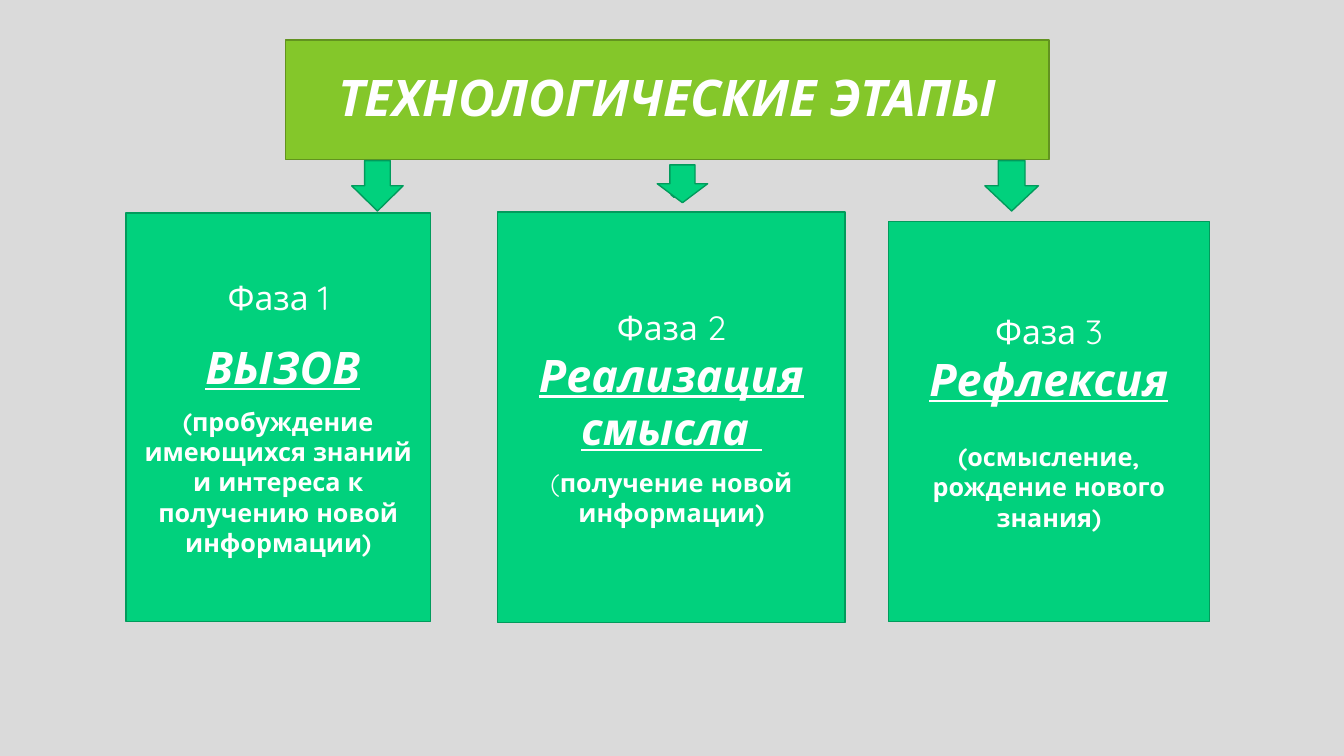
import dataclasses

import pptx
import pptx.dml.color
import pptx.enum.shapes
import pptx.enum.text
import pptx.util


@dataclasses.dataclass(frozen=True)
class Theme:
    font: str = "Quicksand"
    background: str = "DADADA"
    heading_fill: str = "84C72A"
    heading_line: str = "62931F"
    phase_fill: str = "01D17D"
    phase_line: str = "019B5C"
    text: str = "FFFFFF"
    heading_size: int = 36
    phase_size: int = 24
    name_size: int = 32
    detail_size: int = 18


THEME = Theme()
EMU_PER_PX = 9525


def px(length):
    return pptx.util.Emu(length * EMU_PER_PX)


def rgb(colour):
    return pptx.dml.color.RGBColor.from_string(colour)


def write(paragraph, text, size, bold=False, italic=False, underline=False):
    run = paragraph.add_run()
    run.text = text
    font = run.font
    font.name = THEME.font
    font.size = pptx.util.Pt(size)
    font.bold, font.italic, font.underline = bold, italic, underline
    font.color.rgb = rgb(THEME.text)


class StageSlide:
    def __init__(self, presentation, theme):
        self.theme = theme
        self.slide = presentation.slides.add_slide(presentation.slide_layouts[5])
        self.slide.background.fill.solid()
        self.slide.background.fill.fore_color.rgb = rgb(theme.background)

    def paint(self, shape, fill, line):
        shape.fill.solid()
        shape.fill.fore_color.rgb = rgb(fill)
        shape.line.color.rgb = rgb(line)
        shape.line.width = pptx.util.Pt(1)

    def preset(self, kind, bounds):
        shape = self.slide.shapes.add_shape(kind, *map(px, bounds))
        shape.shadow.inherit = False
        self.paint(shape, self.theme.phase_fill, self.theme.phase_line)
        return shape

    def heading(self, text, bounds):
        title = self.slide.shapes.title
        title.left, title.top, title.width, title.height = map(px, bounds)
        self.paint(title, self.theme.heading_fill, self.theme.heading_line)
        frame = title.text_frame
        frame.auto_size = pptx.enum.text.MSO_AUTO_SIZE.NONE
        frame.vertical_anchor = pptx.enum.text.MSO_ANCHOR.MIDDLE
        paragraph = frame.paragraphs[0]
        paragraph.alignment = pptx.enum.text.PP_ALIGN.CENTER
        paragraph.line_spacing = 0.9
        write(paragraph, text, self.theme.heading_size, bold=True, italic=True)

    def phase(self, bounds, paragraphs):
        frame = self.preset(pptx.enum.shapes.MSO_SHAPE.RECTANGLE, bounds).text_frame
        frame.word_wrap = True
        frame.vertical_anchor = pptx.enum.text.MSO_ANCHOR.MIDDLE
        for index, (space_before, runs) in enumerate(paragraphs):
            paragraph = frame.add_paragraph() if index else frame.paragraphs[0]
            paragraph.alignment = pptx.enum.text.PP_ALIGN.CENTER
            paragraph.space_before = pptx.util.Pt(space_before)
            for text, style in runs:
                write(paragraph, text, **style)

    def arrow(self, bounds):
        self.preset(pptx.enum.shapes.MSO_SHAPE.DOWN_ARROW, bounds)


def main():
    presentation = pptx.Presentation()
    presentation.slide_width, presentation.slide_height = px(1280), px(720)
    stages = StageSlide(presentation, THEME)
    stages.heading("ТЕХНОЛОГИЧЕСКИЕ ЭТАПЫ", (272, 38, 727, 114))

    label = dict(size=THEME.phase_size)
    name = dict(size=THEME.name_size, bold=True, italic=True, underline=True)
    detail = dict(size=THEME.detail_size, bold=True)
    bracket = dict(size=THEME.detail_size)
    name_gap, detail_gap, wide_gap = THEME.name_size / 2, THEME.detail_size / 2, 26

    phases = [
        ((120, 203, 290, 389), [
            (0, [("Фаза 1", label)]),
            (name_gap, [(" ", label), ("ВЫЗОВ", name)]),
            (detail_gap, [("(пробуждение имеющихся знаний и интереса "
                           "к получению новой информации)", detail)]),
        ]),
        ((474, 202, 331, 391), [
            (0, [("Фаза 2 ", label), ("Реализация смысла ", name)]),
            (detail_gap, [("(", bracket), ("получение новой информации)", detail)]),
        ]),
        ((846, 211, 306, 381), [
            (0, [("Фаза 3 ", label), ("Рефлексия", name)]),
            (wide_gap, [("(осмысление, рождение нового знания)", detail)]),
        ]),
    ]
    for bounds, paragraphs in phases:
        stages.phase(bounds, paragraphs)

    for bounds in [(938, 153, 51, 48), (639, 183, 6, 5),
                   (335, 153, 49, 48), (626, 157, 48, 36)]:
        stages.arrow(bounds)

    presentation.save("out.pptx")


if __name__ == "__main__":
    main()
